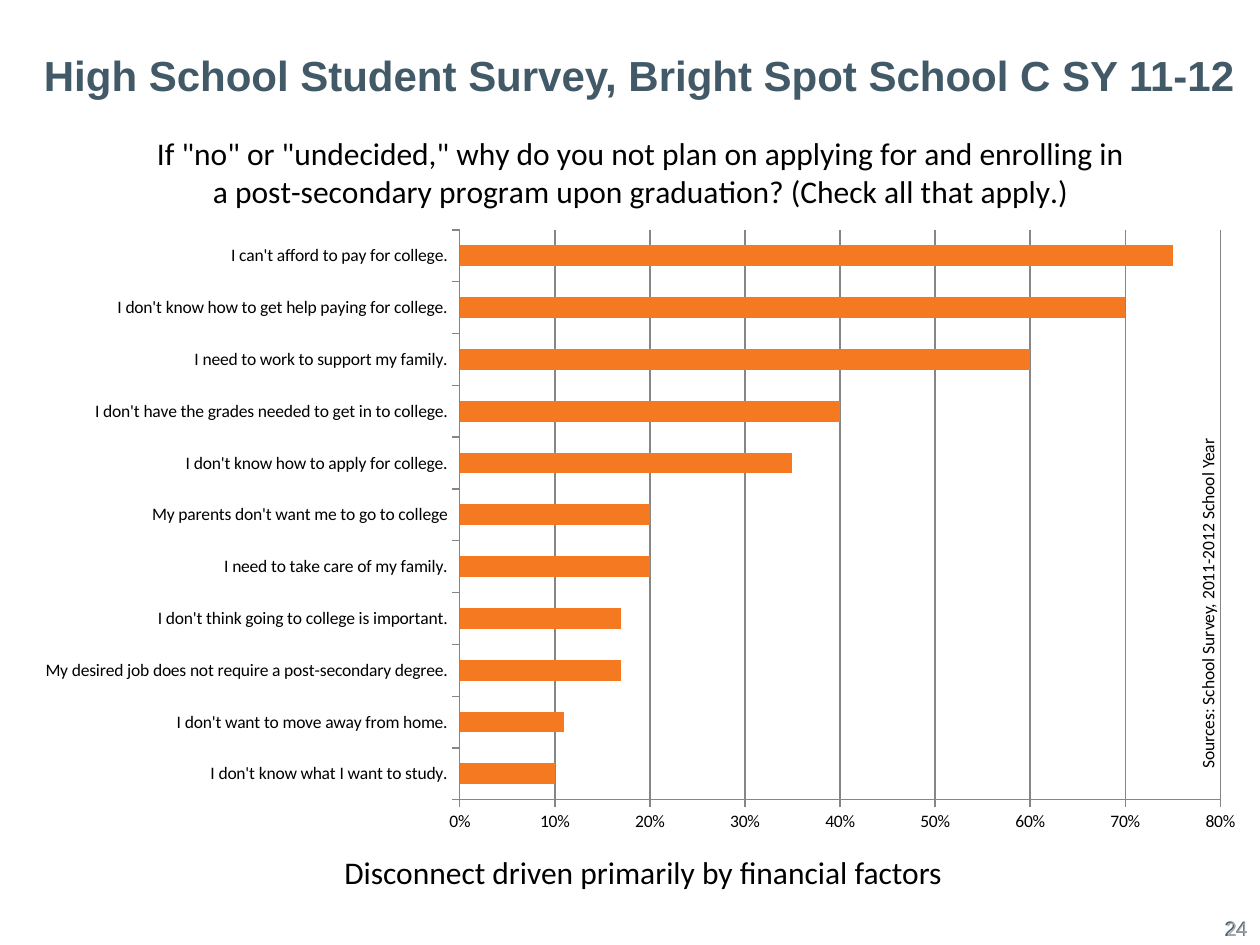
from lxml.etree import SubElement
from pptx import Presentation
from pptx.chart.data import CategoryChartData
from pptx.dml.color import RGBColor
from pptx.enum.chart import XL_CHART_TYPE, XL_TICK_MARK
from pptx.enum.text import MSO_ANCHOR, PP_ALIGN
from pptx.oxml.ns import qn
from pptx.util import Inches, Pt

COLORS = {"slate": "425968", "grey": "A6A6A6", "black": "000000",
          "orange": "F47920", "line": "868686"}

QUESTION = ('If "no" or "undecided," why do you not plan on applying for and enrolling in '
            'a post-secondary program upon graduation? (Check all that apply.)')

ANSWERS = {
    "I don't know what I want to study.": 0.10,
    "I don't want to move away from home.": 0.11,
    "My desired job does not require a post-secondary degree.": 0.17,
    "I don't think going to college is important.": 0.17,
    "I need to take care of my family.": 0.20,
    "My parents don't want me to go to college": 0.20,
    "I don't know how to apply for college.": 0.35,
    "I don't have the grades needed to get in to college.": 0.40,
    "I need to work to support my family.": 0.60,
    "I don't know how to get help paying for college.": 0.70,
    "I can't afford to pay for college.": 0.75,
}

# Plot area as fractions of the chart frame
PLOT = {"x": 0.354, "y": 0.169, "w": 0.614, "h": 0.768}


class SlideBuilder:
    def __init__(self, slide, font="Calibri"):
        self.slide = slide
        self.font = font

    def style(self, font, size, color="black", bold=False, name=None):
        values = {"name": name or self.font, "size": Pt(size), "bold": bold}
        for key, value in values.items():
            setattr(font, key, value)
        font.color.rgb = RGBColor.from_string(COLORS[color])

    def text(self, box, text, size, align=PP_ALIGN.LEFT, anchor=MSO_ANCHOR.TOP,
             rotation=0, **font):
        sp = self.slide.shapes.add_textbox(*map(Inches, box))
        sp.rotation = rotation
        tf = sp.text_frame
        tf.word_wrap = True
        tf.vertical_anchor = anchor
        p = tf.paragraphs[0]
        p.alignment = align
        r = p.add_run()
        r.text = text
        self.style(r.font, size, **font)

    def bar_chart(self, box, title, values):
        data = CategoryChartData(number_format="0%")
        data.categories = list(values)
        data.add_series("Series 1", list(values.values()))
        chart = self.slide.shapes.add_chart(
            XL_CHART_TYPE.BAR_CLUSTERED, *map(Inches, box), data).chart
        self.style(chart.font, 10)
        chart.has_legend = False
        chart.has_title = True
        p = chart.chart_title.text_frame.paragraphs[0]
        r = p.add_run()
        r.text = title
        self.style(r.font, 18)
        chart.chart_title.include_in_layout = False

        plot = chart.plots[0]
        plot.gap_width = 150
        plot.vary_by_categories = False
        fill = plot.series[0].format.fill
        fill.solid()
        fill.fore_color.rgb = RGBColor.from_string(COLORS["orange"])
        self.axes(chart)
        self.place_plot(chart)

    def axes(self, chart):
        axis = chart.value_axis
        scale = {"minimum_scale": 0, "maximum_scale": 0.8, "major_unit": 0.1,
                 "has_major_gridlines": True}
        for key, value in scale.items():
            setattr(axis, key, value)
        axis.tick_labels.number_format = "0%"
        axis.tick_labels.number_format_is_linked = False
        chart.category_axis.has_major_gridlines = False
        for ax in (axis, chart.category_axis):
            ax.major_tick_mark = XL_TICK_MARK.OUTSIDE
        for item in (axis, axis.major_gridlines, chart.category_axis):
            item.format.line.width = Pt(0.75)
            item.format.line.color.rgb = RGBColor.from_string(COLORS["line"])

    def place_plot(self, chart):
        """Fix the inner plot area, axis labels excluded, by the PLOT fractions."""
        area = chart._chartSpace.chart.plotArea
        for old in area.findall(qn("c:layout")):
            area.remove(old)
        layout = SubElement(area, qn("c:layout"))
        area.insert(0, layout)
        manual = SubElement(layout, qn("c:manualLayout"))
        settings = {"layoutTarget": "inner", "xMode": "edge", "yMode": "edge", **PLOT}
        for tag, value in settings.items():
            SubElement(manual, qn(f"c:{tag}")).set("val", str(value))


def main():
    prs = Presentation()
    prs.slide_width, prs.slide_height = Inches(10), Inches(7.5)
    s = SlideBuilder(prs.slides.add_slide(prs.slide_layouts[6]))

    for name, color in (("Arial", "slate"), ("Calibri", "grey")):
        s.text((7.15, 7.22, 2.85, 0.28), "24", 12, PP_ALIGN.RIGHT, color=color, name=name)
    s.text((0.25, -0.03, 9.75, 1.25), "High School Student Survey, Bright Spot School C SY 11-12",
           24, anchor=MSO_ANCHOR.MIDDLE, color="slate", bold=True, name="Arial")
    s.text((0.44, 6.72, 9.33, 0.4), "Disconnect driven primarily by financial factors",
           18, PP_ALIGN.CENTER)
    s.bar_chart((0.17, 0.83, 9.83, 5.89), QUESTION, ANSWERS)
    s.text((7.17, 3.65, 4.83, 0.27), "Sources: School Survey, 2011-2012 School Year",
           10, rotation=270)

    prs.save("out.pptx")


if __name__ == "__main__":
    main()
